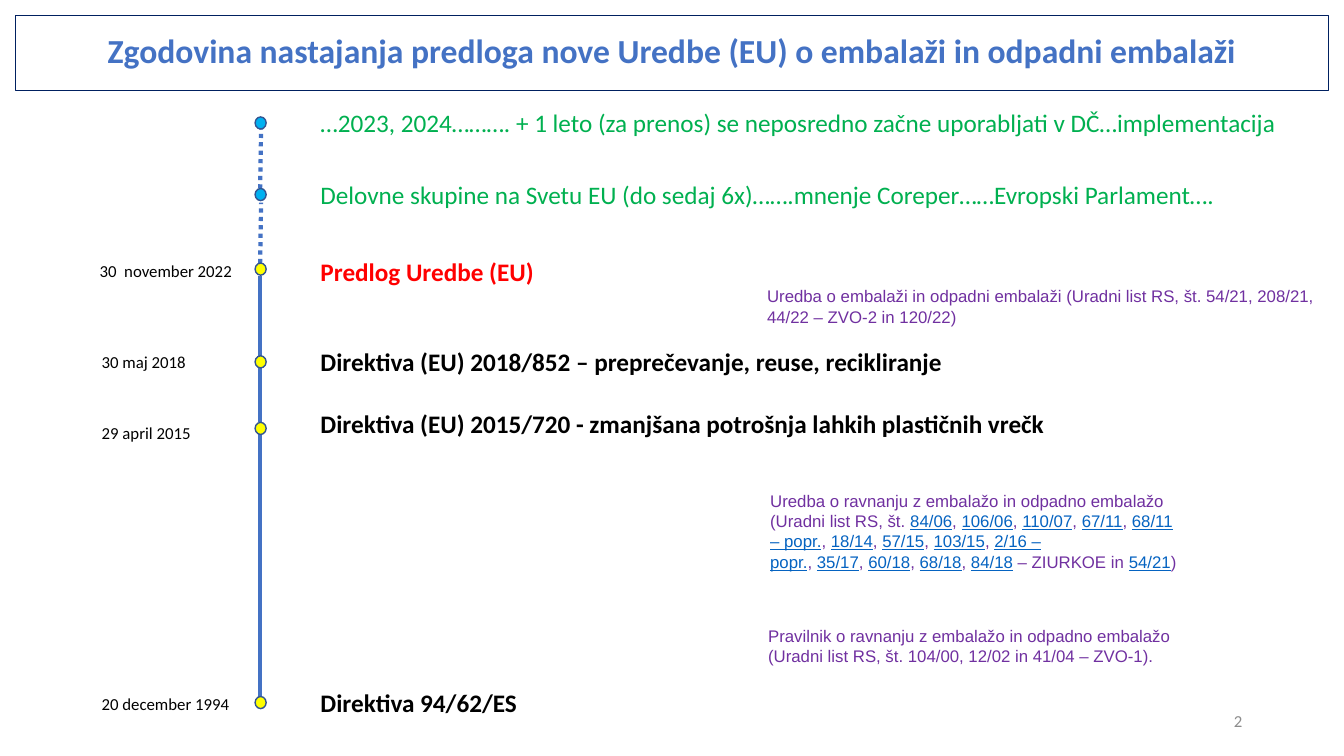
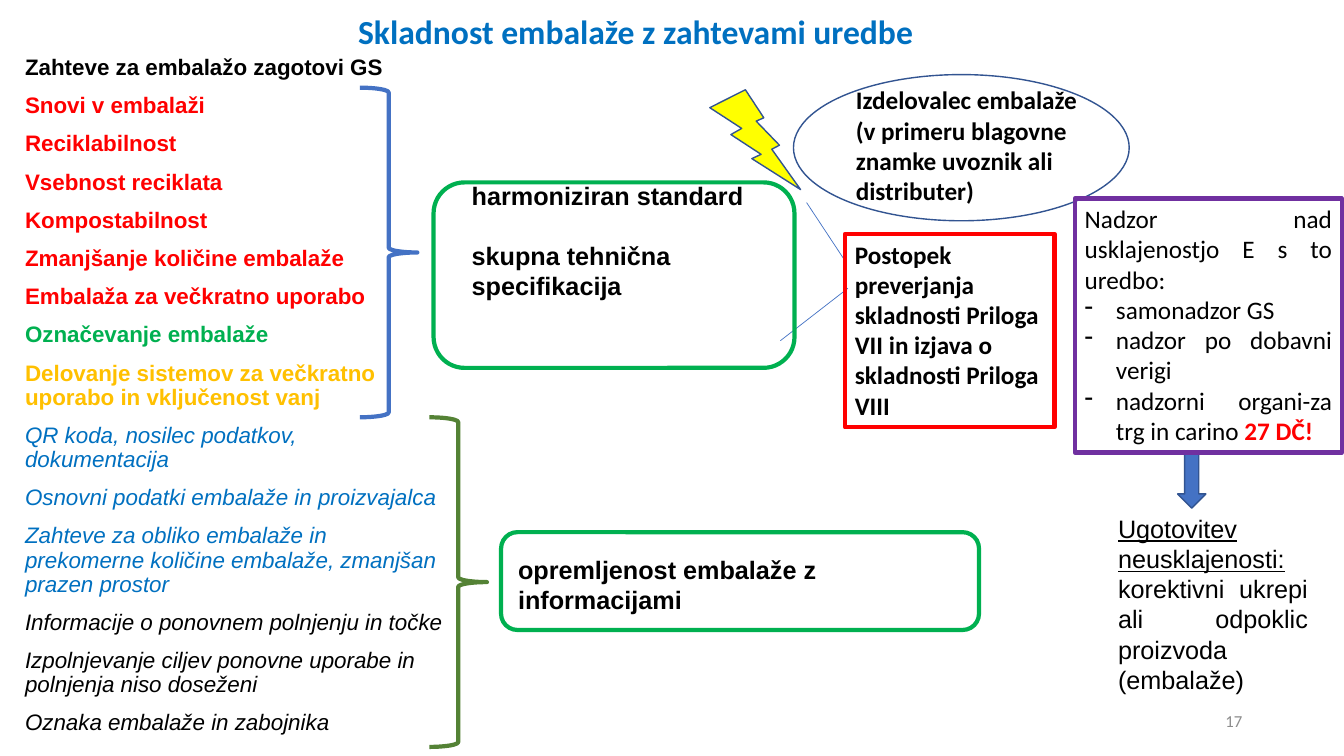
from lxml.etree import SubElement
from pptx import Presentation
from pptx.dml.color import RGBColor
from pptx.enum.dml import MSO_LINE
from pptx.enum.shapes import MSO_CONNECTOR, MSO_SHAPE
from pptx.enum.text import MSO_ANCHOR, PP_ALIGN
from pptx.oxml.ns import qn
from pptx.util import Pt

PX = 9144  # 100 px to the inch
BLUE, OUTLINE, SKY, YELLOW = "4472C4", "325491", "00B0F0", "FFFF00"
BLACK, GREY, RED, GREEN, PURPLE = "000000", "8C8C8C", "FF0000", "00B050", "7030A0"
AMBER, TITLE_BLUE, LINK, NAVY, OLIVE = "FFC000", "0070C0", "0563C1", "002060", "548235"
NO_BREAK = chr(160)

color = RGBColor.from_string


def add_text(slide, box, lines, size=18, name="Calibri", fill=BLACK, bold=False,
             align=PP_ALIGN.LEFT, anchor=MSO_ANCHOR.TOP, border=None, width=3):
    """Add a text box with one paragraph per line and return the paragraphs."""
    shape = slide.shapes.add_textbox(*(value * PX for value in box))
    if border:
        shape.line.color.rgb = color(border)
        shape.line.width = Pt(width)
    frame = shape.text_frame
    frame.word_wrap = True
    frame.vertical_anchor = anchor
    frame.text = "\n".join(lines)
    for paragraph in frame.paragraphs:
        paragraph.alignment = align
        font = paragraph.font
        font.size, font.name, font.bold = Pt(size), name, bold
        font.color.rgb = color(fill)
    return frame.paragraphs


def add_figure(slide, kind, box, fill=None, line=OUTLINE, width=1):
    shape = slide.shapes.add_shape(kind, *(value * PX for value in box))
    shape.shadow.inherit = False
    if fill:
        shape.fill.solid()
        shape.fill.fore_color.rgb = color(fill)
    else:
        shape.fill.background()
    shape.line.color.rgb = color(line)
    shape.line.width = Pt(width)


presentation = Presentation()
presentation.slide_width, presentation.slide_height = 1333 * PX, 750 * PX
blank = presentation.slide_layouts[6]
history = presentation.slides.add_slide(blank)
compliance = presentation.slides.add_slide(blank)

# Titles and slide numbers
for slide, title, box, fill, border, number in [
    (history, "Zgodovina nastajanja predloga nove Uredbe (EU) o embalaži in odpadni embalaži",
     (15, 15, 1303, 75), BLUE, NAVY, "2"),
    (compliance, "Skladnost embalaže z zahtevami uredbe",
     (170, -2, 921, 71), TITLE_BLUE, None, "17"),
]:
    heading = add_text(slide, box, [title], 24, fill=fill, bold=True, align=PP_ALIGN.CENTER,
                       anchor=MSO_ANCHOR.MIDDLE, border=border, width=0.75)
    heading[0].line_spacing = 0.9
    add_text(slide, (942, 695, 300, 40), [number], 12, fill=GREY,
             align=PP_ALIGN.RIGHT, anchor=MSO_ANCHOR.MIDDLE)

# Connecting lines
for slide, ends, width, dash in [
    (history, (258, 691, 258, 431), 3, None),
    (history, (258, 419, 258, 365), 3, None),
    (history, (258, 353, 258, 274), 3, None),
    (history, (258, 261, 259, 201), 3, MSO_LINE.ROUND_DOT),
    (history, (258, 187, 259, 128), 3, MSO_LINE.ROUND_DOT),
    (compliance, (800, 201, 837, 257), 0.5, None),
    (compliance, (774, 338, 841, 286), 0.5, None),
]:
    connector = slide.shapes.add_connector(MSO_CONNECTOR.STRAIGHT, *(value * PX for value in ends))
    connector.line.color.rgb = color(BLUE)
    connector.line.width = Pt(width)
    connector.line.dash_style = dash
    SubElement(connector._element.spPr, qn("a:effectLst"))

# History: timeline events
for dot_top, dot_fill, event_top, event, fill, bold, date_box, date in [
    (116, SKY, 102, "…2023, 2024………. + 1 leto (za prenos) se neposredno začne uporabljati "
     "v DČ…implementacija", GREEN, False, None, None),
    (187, SKY, 173, "Delovne skupine na Svetu EU (do sedaj 6x)…….mnenje Coreper……Evropski "
     "Parlament….", GREEN, False, None, None),
    (261, YELLOW, 249, "Predlog Uredbe (EU)", RED, True, (89, 254, 163, 30), "30  november 2022"),
    (353, YELLOW, 339, "Direktiva (EU) 2018/852 – preprečevanje, reuse, recikliranje",
     BLACK, True, (91, 344, 163, 30), "30 maj 2018"),
    (419, YELLOW, 400, "Direktiva (EU) 2015/720 - zmanjšana potrošnja lahkih plastičnih vrečk",
     BLACK, True, (91, 414, 163, 30), "29 april 2015"),
    (691, YELLOW, 677, "Direktiva 94/62/ES", BLACK, True, (91, 683, 163, 30), "20 december 1994"),
]:
    add_figure(history, MSO_SHAPE.FLOWCHART_CONNECTOR, (253, dot_top, 11, 12), dot_fill)
    add_text(history, (308, event_top, 1010, 40), [event], fill=fill, bold=bold)
    if date:
        add_text(history, date_box, [date], 12)

# History: national regulations
for box, regulation in [
    ((751, 279, 567, 50), "Uredba o embalaži in odpadni embalaži (Uradni list RS, št. 54/21, "
     "208/21, 44/22 – ZVO-2 in 120/22)"),
    ((752, 616, 427, 50), "Pravilnik o ravnanju z embalažo in odpadno embalažo (Uradni list RS, "
     "št. 104/00, 12/02 in 41/04 – ZVO-1)."),
]:
    add_text(history, box, [regulation], 12, "Arial", PURPLE)

[regulation] = add_text(
    history, (754, 482, 425, 91),
    ["Uredba o ravnanju z embalažo in odpadno embalažo (Uradni list RS, št." + NO_BREAK],
    12, "Arial", PURPLE)
gazettes = ("84/06, 106/06, 110/07, 67/11, 68/11 – popr., 18/14, 57/15, 103/15, 2/16 – popr., "
            "35/17, 60/18, 68/18, 84/18, 54/21").split(", ")
endings = {"84/18": f"{NO_BREAK}– ZIURKOE in{NO_BREAK}", "54/21": ")"}
for gazette in gazettes:
    run = regulation.add_run()
    run.text = gazette
    run.font.underline = True
    run.font.color.rgb = color(LINK)
    regulation.add_run().text = endings.get(gazette, "," + NO_BREAK)

# Compliance: list of requirements
requirements = [
    ("Zahteve za embalažo zagotovi GS", BLACK, True),
    ("Snovi v embalaži", RED, True),
    ("Reciklabilnost", RED, True),
    ("Vsebnost reciklata", RED, True),
    ("Kompostabilnost", RED, True),
    ("Zmanjšanje količine embalaže", RED, True),
    ("Embalaža za večkratno uporabo", RED, True),
    ("Označevanje embalaže", GREEN, True),
    ("Delovanje sistemov za večkratno uporabo in vključenost vanj", AMBER, True),
    ("QR koda, nosilec podatkov, dokumentacija", TITLE_BLUE, False),
    ("Osnovni podatki embalaže in proizvajalca", TITLE_BLUE, False),
    ("Zahteve za obliko embalaže in prekomerne količine embalaže, zmanjšan prazen prostor",
     TITLE_BLUE, False),
    ("Informacije o ponovnem polnjenju in točke", BLACK, False),
    ("Izpolnjevanje ciljev ponovne uporabe in polnjenja niso doseženi", BLACK, False),
    ("Oznaka embalaže in zabojnika", BLACK, False),
]
paragraphs = add_text(compliance, (15, 51, 435, 644), [text for text, _, _ in requirements],
                      16, "Arial")
for paragraph, (_, fill, bold) in zip(paragraphs, requirements):
    paragraph.line_spacing = 0.9
    paragraph.space_before = Pt(10)
    paragraph.font.color.rgb = color(fill)
    paragraph.font.bold = bold
    paragraph.font.italic = not bold

# Compliance: figures
for kind, box, fill, line, width in [
    (MSO_SHAPE.OVAL, (787, 74, 333, 145), "FFFFFF", OUTLINE, 1),
    (MSO_SHAPE.ROUNDED_RECTANGLE, (430, 181, 358, 184), None, GREEN, 3),
    (MSO_SHAPE.ROUNDED_RECTANGLE, (497, 528, 474, 97), None, GREEN, 3),
    (MSO_SHAPE.RIGHT_BRACE, (357, 87, 57, 327), None, BLUE, 3),
    (MSO_SHAPE.RIGHT_BRACE, (426, 414, 57, 327), None, OLIVE, 3),
    (MSO_SHAPE.LIGHTNING_BOLT, (704, 89, 90, 99), YELLOW, OUTLINE, 1),
    (MSO_SHAPE.DOWN_ARROW, (1168, 449, 28, 55), BLUE, OUTLINE, 1),
]:
    add_figure(compliance, kind, box, fill, line, width)

# Compliance: texts beside and inside the figures
standards = add_text(compliance, (458, 174, 301, 131),
                     ["harmoniziran standard", "skupna tehnična specifikacija"],
                     name="Arial", bold=True)
standards[1].space_before = Pt(21)
add_text(compliance, (504, 545, 430, 71), ["opremljenost embalaže z informacijami"],
         name="Arial", bold=True)
add_text(compliance, (839, 79, 263, 131),
         ["Izdelovalec embalaže (v primeru blagovne znamke uvoznik ali distributer)"], bold=True)
add_text(compliance, (838, 232, 208, 192),
         ["Postopek preverjanja skladnosti Priloga VII in izjava o skladnosti Priloga VIII"],
         bold=True, border=RED)

supervision = add_text(
    compliance, (1066, 197, 265, 252),
    ["Nadzor nad usklajenostjo E s to uredbo:", "samonadzor GS", "nadzor po dobavni verigi",
     "nadzorni organi-za trg in carino "], align=PP_ALIGN.JUSTIFY, border=PURPLE)
for paragraph in supervision[1:]:
    properties = paragraph._p.get_or_add_pPr()
    properties.set("marL", str(31 * PX))
    properties.set("indent", str(-31 * PX))
    bullet = SubElement(properties, qn("a:buChar"), char="-")
    properties.find(qn("a:defRPr")).addprevious(bullet)
run = supervision[-1].add_run()
run.text = "27 DČ!"
run.font.bold = True
run.font.color.rgb = color(RED)

findings = add_text(compliance, (1099, 504, 208, 192),
                    ["Ugotovitev neusklajenosti:",
                     "korektivni ukrepi ali odpoklic proizvoda (embalaže)"],
                    name="Arial", align=PP_ALIGN.JUSTIFY)
findings[0].font.underline = True

presentation.save("out.pptx")
